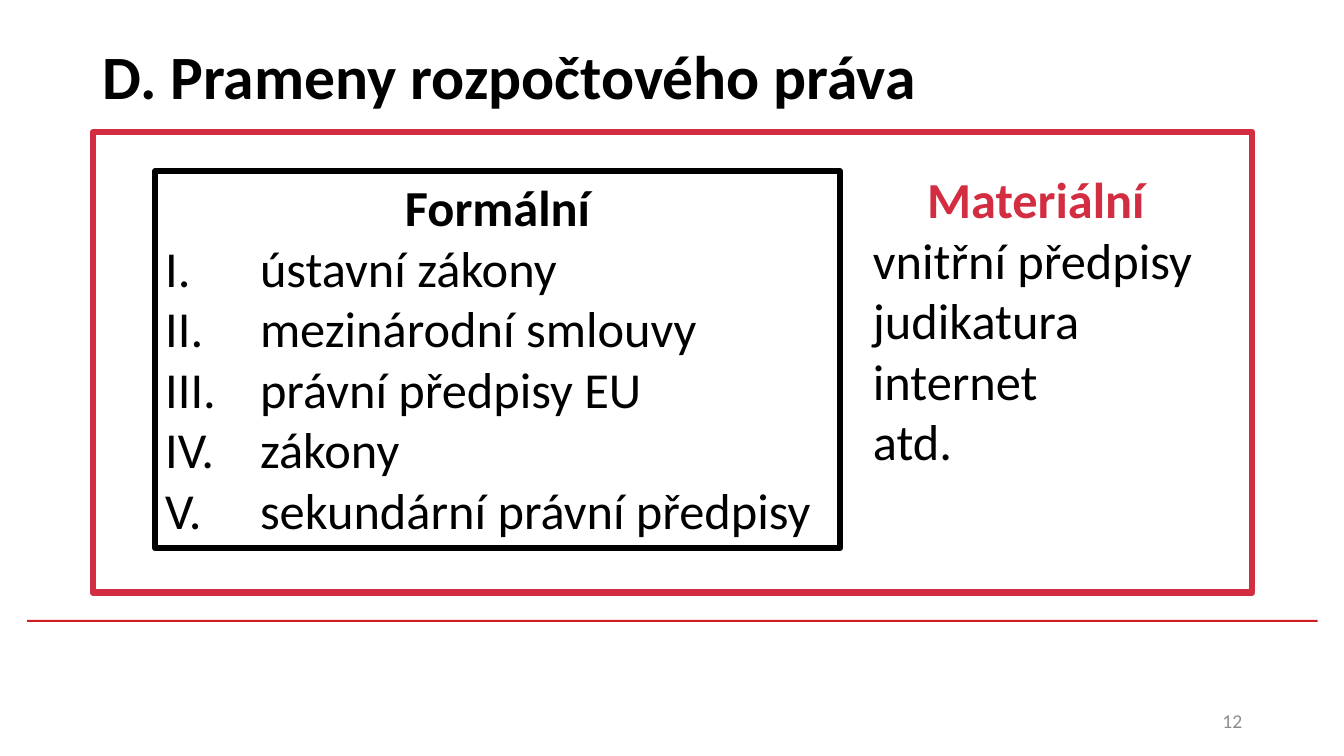
from dataclasses import dataclass

from lxml.etree import SubElement
from pptx import Presentation
from pptx.dml.color import RGBColor as Color
from pptx.enum.shapes import MSO_SHAPE as Shape
from pptx.enum.text import MSO_ANCHOR as Anchor, PP_ALIGN as Align
from pptx.oxml.ns import qn
from pptx.util import Inches, Pt


@dataclass(frozen=True)
class Theme:
    font: str = "Calibri"
    black: str = "000000"
    white: str = "FFFFFF"
    red: str = "D22D40"
    rule_red: str = "CD1F21"
    gray: str = "8C8C8C"
    title_size: int = 44
    body_size: int = 36
    number_size: int = 14
    border: float = 4.5


class SlideBuilder:
    def __init__(self, slide, theme):
        self.slide = slide
        self.theme = theme

    def rectangle(self, left, top, width, height, fill=None, line=None):
        box = self.slide.shapes.add_shape(
            Shape.RECTANGLE, Inches(left), Inches(top), Inches(width), Inches(height))
        box.shadow.inherit = False
        if fill:
            box.fill.solid()
            box.fill.fore_color.rgb = Color.from_string(fill)
        else:
            box.fill.background()
        if line:
            box.line.color.rgb = Color.from_string(line)
            box.line.width = Pt(self.theme.border)
        else:
            box.line.fill.background()
        return box

    def text_box(self, left, top, width, height, anchor=Anchor.TOP):
        box = self.slide.shapes.add_textbox(
            Inches(left), Inches(top), Inches(width), Inches(height))
        box.text_frame.word_wrap = True
        box.text_frame.vertical_anchor = anchor
        return box

    def paragraph(self, box, text, size, color, bold=False, align=Align.LEFT, roman=False):
        """Fill the first paragraph if it is empty, otherwise append one."""
        frame = box.text_frame
        para = frame.paragraphs[0] if not frame.text else frame.add_paragraph()
        para.text = text
        para.alignment = align
        if roman:
            properties = para._p.get_or_add_pPr()
            indent = Inches(0.94)
            properties.set("marL", str(indent))
            properties.set("indent", str(-indent))
            SubElement(properties, qn("a:buFont"), typeface="+mj-lt")
            SubElement(properties, qn("a:buAutoNum"), type="romanUcPeriod")
        para.font.name = self.theme.font
        para.font.size = Pt(size)
        para.font.bold = bold
        para.font.color.rgb = Color.from_string(color)

    def source_list(self, box, heading, heading_color, items, roman=False):
        """Write a centred bold heading with its items below."""
        size = self.theme.body_size
        self.paragraph(box, heading, size, heading_color, bold=True, align=Align.CENTER)
        for item in items:
            self.paragraph(box, item, size, self.theme.black, roman=roman)


def main():
    deck = Presentation()
    deck.slide_width, deck.slide_height = Inches(13.33), Inches(7.5)
    theme = Theme()
    page = SlideBuilder(deck.slides.add_slide(deck.slide_layouts[6]), theme)

    page.rectangle(0.27, 6.15, 12.8, 0.02, fill=theme.rule_red)

    title = page.text_box(0.92, 0.02, 11.5, 1.45, Anchor.MIDDLE)
    page.paragraph(title, "D. Prameny rozpočtového práva", theme.title_size,
                   theme.black, bold=True)

    number = page.text_box(9.42, 6.95, 3, 0.4, Anchor.MIDDLE)
    page.paragraph(number, "12", theme.number_size, theme.gray, align=Align.RIGHT)

    page.rectangle(0.92, 1.31, 11.5, 4.57, fill=theme.white, line=theme.red)

    material = page.text_box(8.56, 1.62, 3.43, 3.74)
    page.source_list(material, "Materiální", theme.red,
                     ["vnitřní předpisy", "judikatura", "internet", "atd."])

    formal = page.rectangle(1.54, 1.7, 6.79, 3.74, line=theme.black)
    SubElement(formal.line._get_or_add_ln(), qn("a:round"))
    formal.text_frame.word_wrap = True
    formal.text_frame.vertical_anchor = Anchor.TOP
    page.source_list(formal, "Formální", theme.black,
                     ["ústavní zákony", "mezinárodní smlouvy", "právní předpisy EU",
                      "zákony", "sekundární právní předpisy"], roman=True)

    deck.save("out.pptx")


if __name__ == "__main__":
    main()
